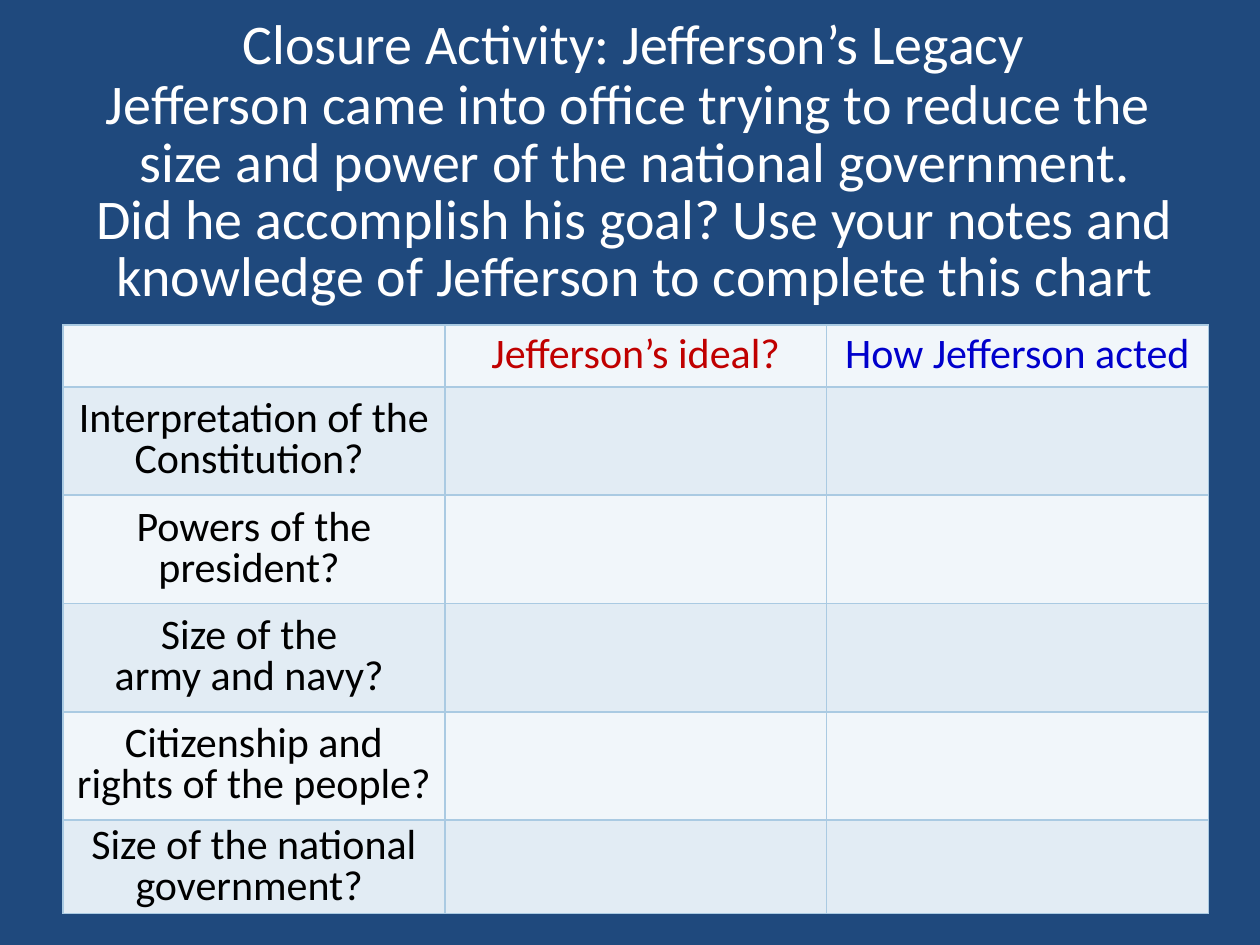
from lxml.etree import SubElement
from pptx import Presentation
from pptx.dml.color import RGBColor as RGB
from pptx.enum.text import MSO_ANCHOR as Anchor, PP_ALIGN as Align
from pptx.oxml.ns import qn
from pptx.util import Inches, Pt

# Content
HEADING = "Closure Activity: Jefferson’s Legacy"
PROMPT = [
    "Jefferson came into office trying to reduce the \vsize and power of the national government.",
    "Did he accomplish his goal? Use your notes and knowledge of Jefferson to complete this chart",
]
COLUMNS = ["", "Jefferson’s ideal?", "How Jefferson acted"]
TOPICS = [
    "Interpretation of the Constitution? ",
    "Powers of the president? ",
    "Size of the \varmy and navy? ",
    "Citizenship and rights of the people? ",
    "Size of the national government? ",
]
ROW_HEIGHTS = [0.49] + [0.86] * 4 + [0.74]
COLUMN_WIDTH = 3.03

THEME = {
    "font": "Calibri", "heading_size": 32, "cell_size": 24,
    "background": "1F497D", "light": "FFFFFF", "topic": "000000",
    "columns": ["000000", "C00000", "0000CC"],
    "bands": ["F1F6FA", "E2ECF4"], "border": "AACAE2",
}


def format_paragraph(paragraph, size, color, spacing=1.0):
    paragraph.alignment = Align.CENTER
    paragraph.line_spacing = spacing
    for run in paragraph.runs:
        run.font.name = THEME["font"]
        run.font.size = Pt(size)
        run.font.bold = False
        run.font.color.rgb = RGB.from_string(color)


def add_borders(cell):
    properties = cell._tc.get_or_add_tcPr()
    for position, side in enumerate(("lnL", "lnR", "lnT", "lnB")):
        line = properties.makeelement(qn("a:" + side), {"w": str(Pt(1))})
        fill = SubElement(line, qn("a:solidFill"))
        SubElement(fill, qn("a:srgbClr"), val=THEME["border"])
        properties.insert(position, line)


def main():
    deck = Presentation()
    deck.slide_width, deck.slide_height = Inches(10), Inches(7.5)
    slide = deck.slides.add_slide(deck.slide_layouts[5])
    slide.background.fill.solid()
    slide.background.fill.fore_color.rgb = RGB.from_string(THEME["background"])

    # Heading
    heading = slide.shapes.title
    heading.left, heading.top = Inches(0.31), Inches(0)
    heading.width, heading.height = Inches(9.44), Inches(0.67)
    heading.text_frame.text = HEADING
    heading.text_frame.vertical_anchor = Anchor.MIDDLE
    format_paragraph(heading.text_frame.paragraphs[0], THEME["heading_size"], THEME["light"])

    # Prompt
    prompt = slide.shapes.add_textbox(
        Inches(0.5), Inches(0.58), Inches(9.08), Inches(1.93)).text_frame
    prompt.word_wrap = True
    for index, sentence in enumerate(PROMPT):
        paragraph = prompt.paragraphs[0] if index == 0 else prompt.add_paragraph()
        paragraph.text = sentence
        format_paragraph(paragraph, THEME["heading_size"], THEME["light"], 0.85)

    # Comparison chart, with blank answer cells
    rows = [COLUMNS] + [[topic, "", ""] for topic in TOPICS]
    chart = slide.shapes.add_table(
        len(rows), len(COLUMNS), Inches(0.5), Inches(2.58),
        Inches(COLUMN_WIDTH * len(COLUMNS)), Inches(sum(ROW_HEIGHTS))).table
    for column in chart.columns:
        column.width = Inches(COLUMN_WIDTH)
    for r, (row, height) in enumerate(zip(rows, ROW_HEIGHTS)):
        chart.rows[r].height = Inches(height)
        for c, wording in enumerate(row):
            cell = chart.cell(r, c)
            cell.fill.solid()
            cell.fill.fore_color.rgb = RGB.from_string(THEME["bands"][r % 2])
            add_borders(cell)
            cell.vertical_anchor = Anchor.MIDDLE
            if wording:
                cell.text_frame.text = wording
                paragraph = cell.text_frame.paragraphs[0]
                # A vertical tab stays one paragraph with a line break
                paragraph.text = wording
                color = THEME["columns"][c] if r == 0 else THEME["topic"]
                format_paragraph(paragraph, THEME["cell_size"], color, 0.8)

    deck.save("out.pptx")


if __name__ == "__main__":
    main()
